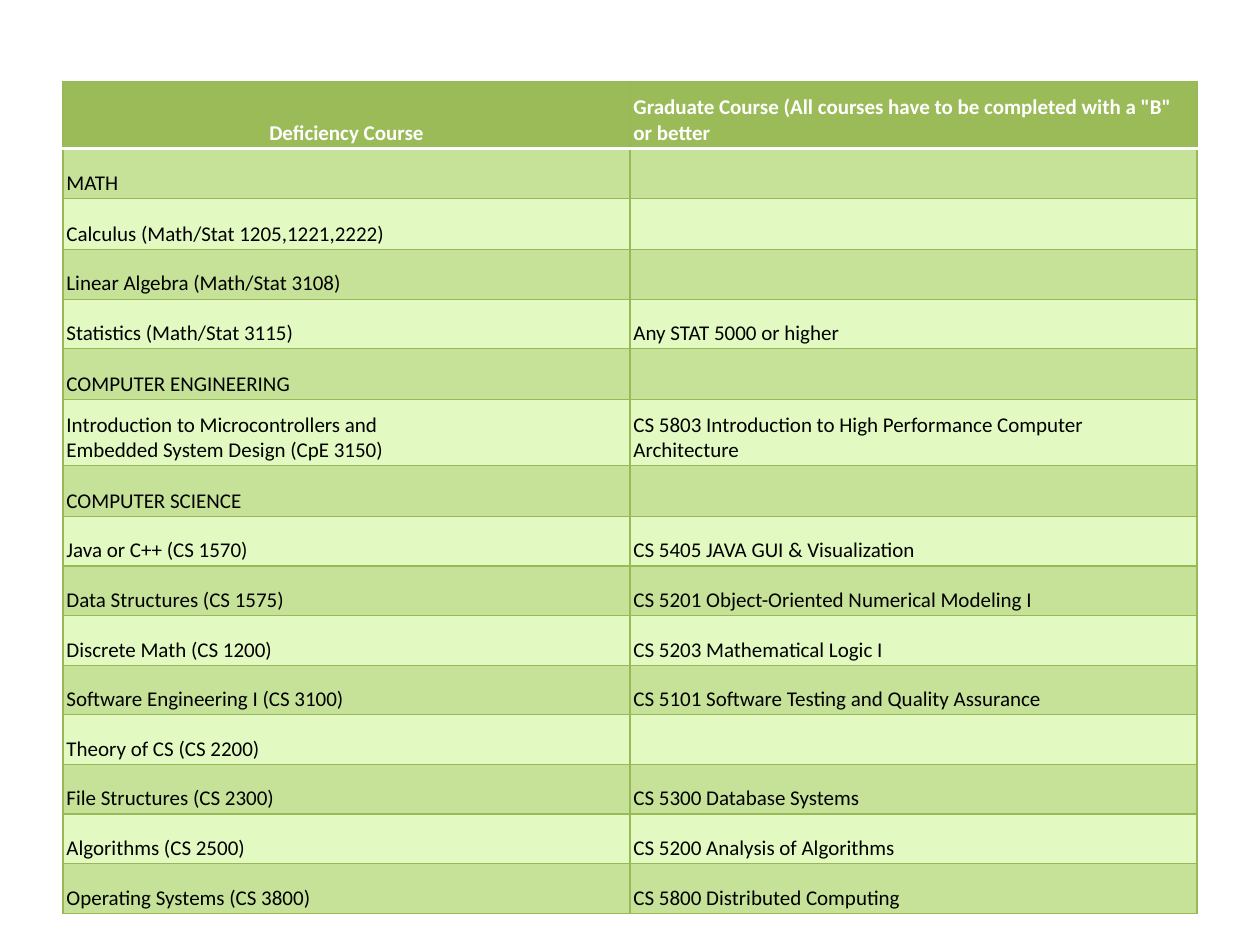
"""Build a slide with a table of deficiency courses and their graduate equivalents."""
from dataclasses import dataclass

from lxml import etree
from pptx import Presentation
from pptx import util as u
from pptx.dml.color import RGBColor
from pptx.enum import text
from pptx.oxml.ns import qn

HEADER = ("Deficiency Course", 'Graduate Course (All courses have to be completed with a "B" or better')
COURSES = [
    ("MATH", ""),
    ("Calculus (Math/Stat 1205,1221,2222)", ""),
    ("Linear Algebra (Math/Stat 3108)", ""),
    ("Statistics (Math/Stat 3115)", "Any STAT 5000 or higher"),
    ("COMPUTER ENGINEERING", ""),
    ("Introduction to Microcontrollers and\vEmbedded System Design (CpE 3150)",
     "CS 5803 Introduction to High Performance Computer Architecture"),
    ("COMPUTER SCIENCE", ""),
    ("Java or C++ (CS 1570)", "CS 5405 JAVA GUI & Visualization"),
    ("Data Structures (CS 1575)", "CS 5201 Object-Oriented Numerical Modeling I"),
    ("Discrete Math (CS 1200)", "CS 5203 Mathematical Logic I"),
    ("Software Engineering I (CS 3100)", "CS 5101 Software Testing and Quality Assurance"),
    ("Theory of CS (CS 2200)", ""),
    ("File Structures (CS 2300)", "CS 5300 Database Systems"),
    ("Algorithms (CS 2500)", "CS 5200 Analysis of Algorithms"),
    ("Operating Systems (CS 3800)", "CS 5800 Distributed Computing"),
]
LEFT, TOP, COLUMN_WIDTH = 1.27, 1.65, 11.43
ROW_HEIGHT, SECTION_HEIGHT, TWO_LINE_HEIGHT = 1.0, 1.02, 1.34
SECTION_ROWS = (1, 2, 5, 7)
TWO_LINE_ROWS = (0, 6)


@dataclass(frozen=True)
class Theme:
    """Colours and type sizes of the slide."""
    font: str = "Calibri"
    size: float = 12
    header: str = "9BBB59"
    bands: tuple = ("E2FAC1", "C6E198")
    border: str = "98B955"
    white: str = "FFFFFF"
    black: str = "000000"


THEME = Theme()


def row_height(index):
    """Return the height of a table row in centimetres."""
    if index in TWO_LINE_ROWS:
        return TWO_LINE_HEIGHT
    return SECTION_HEIGHT if index in SECTION_ROWS else ROW_HEIGHT


def write(cell, content, *, color, bold=False, align=text.PP_ALIGN.LEFT):
    """Write formatted text at the bottom of a cell."""
    cell.margin_left = cell.margin_right = u.Cm(0.07)
    cell.margin_top = cell.margin_bottom = u.Cm(0.05)
    cell.vertical_anchor = text.MSO_ANCHOR.BOTTOM
    paragraph = cell.text_frame.paragraphs[0]
    paragraph.text = content
    paragraph.alignment = align
    for run in paragraph.runs:
        run.font.name = THEME.font
        run.font.size = u.Pt(THEME.size)
        run.font.bold = bold
        run.font.color.rgb = RGBColor.from_string(color)


def outline(cell, **special):
    """Draw the four borders of a cell, with (colour, points) exceptions by side."""
    properties = cell._tc.get_or_add_tcPr()
    for side in "LRTB":
        color, points = special.get(side, (THEME.border, 0.75))
        line = etree.SubElement(properties, qn(f"a:ln{side}"), w=str(u.Pt(points)))
        fill = etree.SubElement(line, qn("a:solidFill"))
        etree.SubElement(fill, qn("a:srgbClr"), val=color)


def paint(cell, color):
    """Fill a cell with one colour."""
    cell.fill.solid()
    cell.fill.fore_color.rgb = RGBColor.from_string(color)


def add_course_table(slide):
    """Add the course table to the slide."""
    rows = [HEADER, *COURSES]
    heights = [row_height(index) for index in range(len(rows))]
    table = slide.shapes.add_table(
        len(rows), len(HEADER), u.Cm(LEFT), u.Cm(TOP),
        u.Cm(COLUMN_WIDTH * len(HEADER)), u.Cm(sum(heights))).table
    table.horz_banding = False
    for column in table.columns:
        column.width = u.Cm(COLUMN_WIDTH)
    divider = (THEME.white, 2)
    for index, (row, height) in enumerate(zip(rows, heights)):
        table.rows[index].height = u.Cm(height)
        for position, content in enumerate(row):
            cell = table.cell(index, position)
            if index == 0:
                align = text.PP_ALIGN.LEFT if position else text.PP_ALIGN.CENTER
                write(cell, content, color=THEME.white, bold=True, align=align)
                outline(cell, B=divider)
                paint(cell, THEME.header)
            else:
                write(cell, content, color=THEME.black)
                outline(cell, **({"T": divider} if index == 1 else {}))
                paint(cell, THEME.bands[index % 2])


def main():
    """Create and save the presentation."""
    presentation = Presentation()
    presentation.slide_width, presentation.slide_height = u.Cm(25.4), u.Cm(19.05)
    slide = presentation.slides.add_slide(presentation.slide_layouts[6])
    add_course_table(slide)
    presentation.save("out.pptx")


if __name__ == "__main__":
    main()
